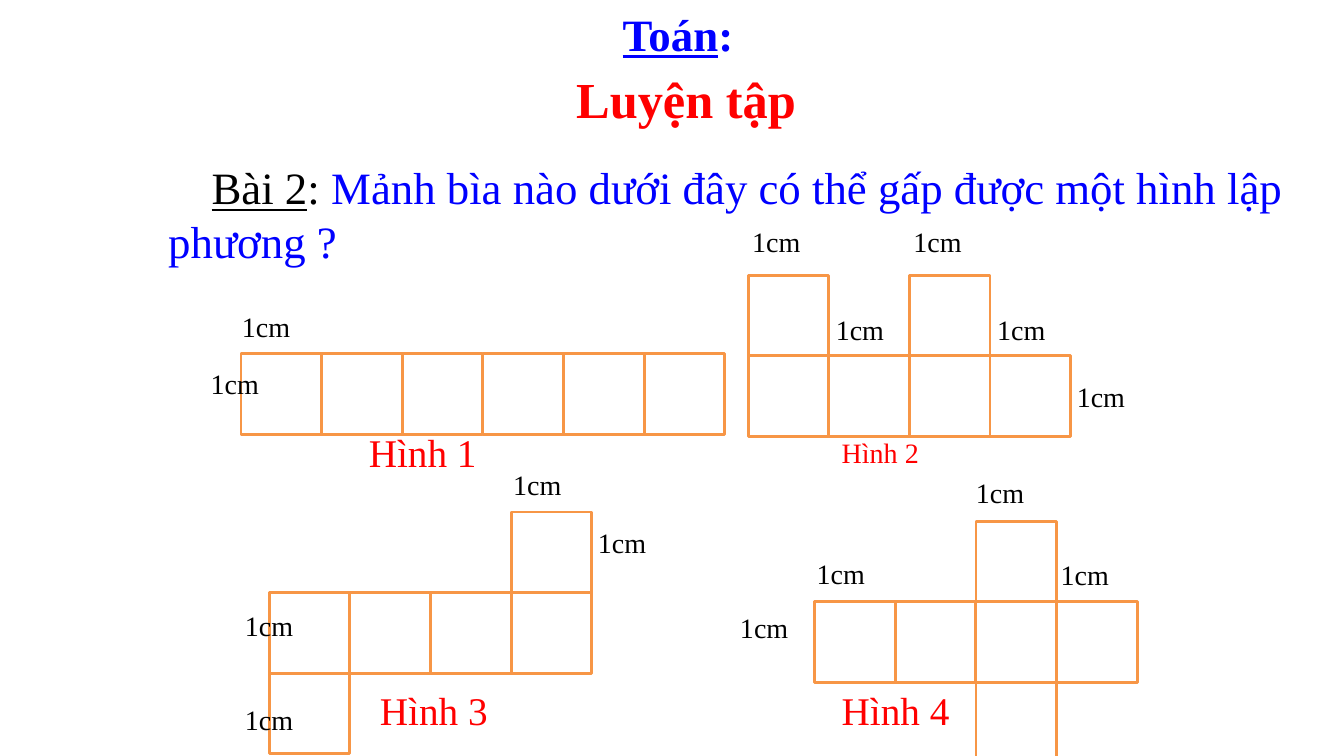
from pptx import Presentation
from pptx.dml.color import RGBColor
from pptx.enum.shapes import MSO_SHAPE
from pptx.enum.text import MSO_ANCHOR, MSO_AUTO_SIZE, PP_ALIGN
from pptx.util import Inches, Pt

BLACK, BLUE, RED, ORANGE, WHITE = "000000", "0000FF", "FF0000", "F79646", "FFFFFF"
FONT = "Times New Roman"
SIDE = 0.8
LABEL = "1cm"

SUBJECT = [("Toán", dict(size=32, color=BLUE, bold=True, underline=True)),
           (": ", dict(size=32, color=BLUE, bold=True))]
TITLE = [("Luyện tập", dict(size=36, color=RED, bold=True))]
TASK = [("Bài 2", dict(size=32, color=BLACK, underline=True)),
        (": ", dict(size=32, color=BLACK)),
        ("Mảnh bìa nào dưới đây có thể gấp được một hình lập phương ?",
         dict(size=32, color=BLUE))]

NETS = [
    dict(name="Hình 1", size=28, caption=(3.56, 4.2), origin=(2.39, 3.51), fill=WHITE,
         cells=[(0, 0), (1, 0), (2, 0), (3, 0), (4, 0), (5, 0)],
         labels=[(2.39, 3.02), (2.08, 3.59)]),
    dict(name="Hình 2", size=20, caption=(8.25, 4.27), origin=(7.42, 3.53), fill=None,
         cells=[(0, 0), (1, 0), (2, 0), (3, 0), (0, -1), (2, -1)],
         labels=[(8.28, 3.05), (7.45, 2.18), (9.88, 3.05), (9.05, 2.18), (10.67, 3.72)]),
    dict(name="Hình 3", size=28, caption=(3.67, 6.76), origin=(2.67, 5.88), fill=None,
         cells=[(0, 0), (1, 0), (2, 0), (3, 0), (0, 1), (3, -1)],
         labels=[(5.92, 5.16), (5.08, 4.59), (2.42, 6.92), (2.42, 5.99)]),
    dict(name="Hình 4", size=28, caption=(8.25, 6.76), origin=(8.08, 5.97), fill=None,
         cells=[(0, 0), (1, 0), (3, 0), (2, 1), (2, -1)],
         labels=[(7.33, 6.01), (8.09, 5.47), (9.67, 4.67), (10.51, 5.48)]),
]


def rgb(value):
    return RGBColor.from_string(value)


def write(sp, runs, align=PP_ALIGN.LEFT, inset=0.1):
    tf = sp.text_frame
    frame = dict(word_wrap=True, auto_size=MSO_AUTO_SIZE.NONE, vertical_anchor=MSO_ANCHOR.TOP,
                 margin_left=Inches(inset), margin_right=Inches(inset),
                 margin_top=Inches(0.05), margin_bottom=Inches(0.05))
    for key, value in frame.items():
        setattr(tf, key, value)
    p = tf.paragraphs[0]
    p.alignment = align
    for text, fmt in runs:
        r = p.add_run()
        r.text = text
        values = dict(bold=False, underline=False) | fmt
        r.font.color.rgb = rgb(values.pop("color"))
        values.update(name=FONT, size=Pt(values["size"]))
        for key, value in values.items():
            setattr(r.font, key, value)
    return p


def add_text(shapes, box, runs, **options):
    sp = shapes.add_textbox(*map(Inches, box))
    return write(sp, runs, **options)


def add_square(shapes, left, top, fill):
    sp = shapes.add_shape(MSO_SHAPE.RECTANGLE, *map(Inches, (left, top, SIDE, SIDE)))
    sp.shadow.inherit = False
    if fill:
        sp.fill.solid()
        sp.fill.fore_color.rgb = rgb(fill)
    else:
        sp.fill.background()
    sp.line.color.rgb = rgb(ORANGE)
    sp.line.width = Pt(2)


def add_net(s, net):
    shapes = s.shapes.add_group_shape().shapes
    left, top = net["origin"]
    for col, row in net["cells"]:
        add_square(shapes, left + col * SIDE, top + row * SIDE, net["fill"])
    add_text(shapes, (*net["caption"], 1.5, 0.57),
             [(net["name"], dict(size=net["size"], color=RED))])
    for spot in net["labels"]:
        add_text(shapes, (*spot, 1, 0.44), [(LABEL, dict(size=20, color=BLACK))], inset=0.01)


def main():
    prs = Presentation()
    prs.slide_width, prs.slide_height = Inches(13.33), Inches(7.5)
    s = prs.slides.add_slide(prs.slide_layouts[5])

    title = s.shapes.title
    box = dict(left=4.02, top=0.63, width=5.57, height=0.71)
    for key, value in box.items():
        setattr(title, key, Inches(value))
    write(title, TITLE, align=PP_ALIGN.CENTER)
    add_text(s.shapes, (4, 0.02, 5.56, 0.64), SUBJECT, align=PP_ALIGN.CENTER)

    p = add_text(s.shapes, (1.57, 1.54, 11.76, 0.54), TASK)
    p.space_before = Pt(6.4)
    p._p.get_or_add_pPr().set("indent", str(Inches(0.43)))

    for net in NETS:
        add_net(s, net)
    prs.save("out.pptx")


if __name__ == "__main__":
    main()
